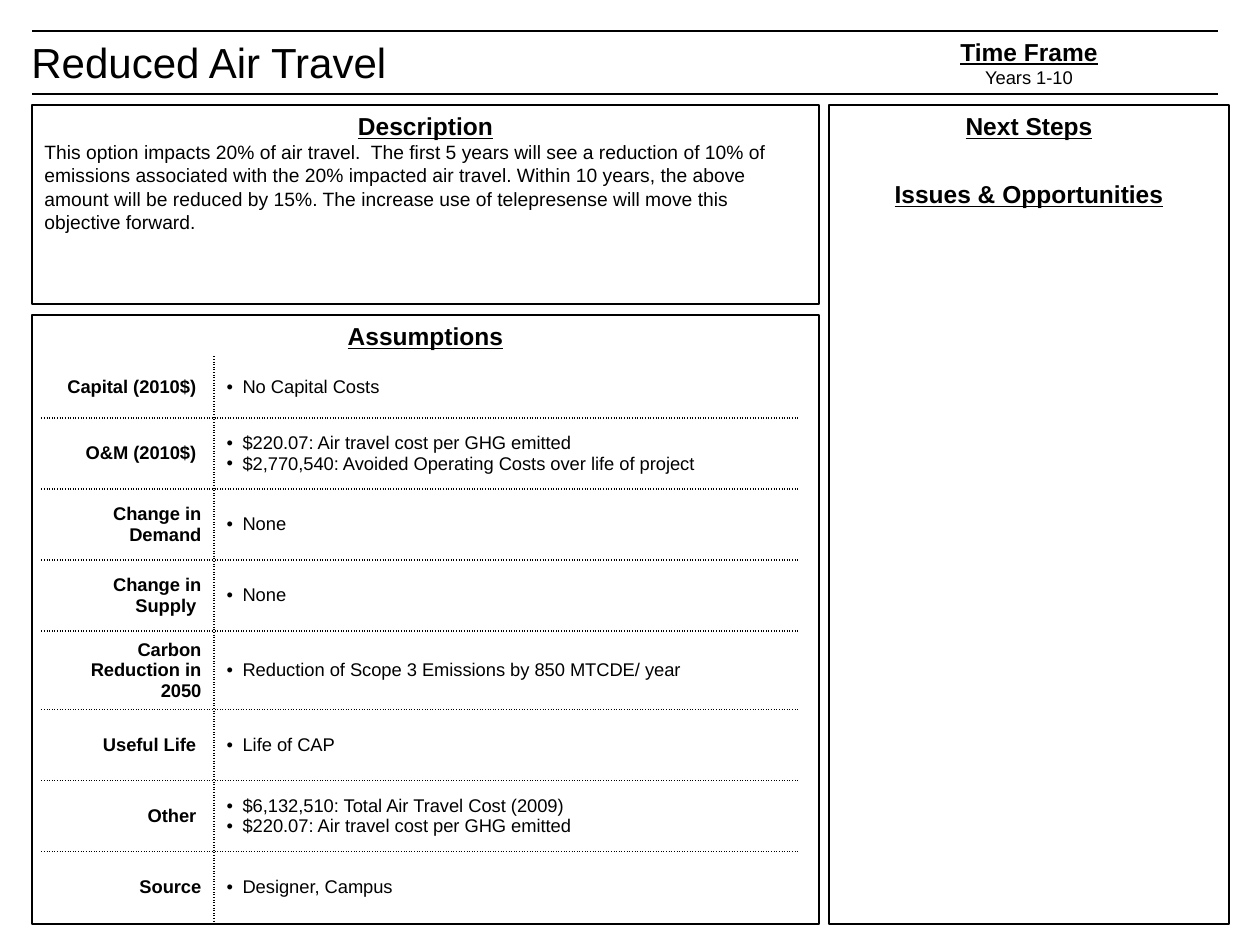
from lxml import etree
from pptx import Presentation
from pptx import util as u
from pptx.dml.color import RGBColor
from pptx.enum import shapes, text
from pptx.oxml import ns

PX = 914400 / 126
COLORS = {"ink": "000000"}
INK = RGBColor.from_string(COLORS["ink"])
ALIGN = text.PP_ALIGN


def px(*values):
    return [u.Emu(round(v * PX)) for v in values]


def write(tf, content, size=10.5, bold=False, underline=False,
          align=ALIGN.LEFT, before=0, bullet=False):
    p = tf.paragraphs[0]
    if p.runs:
        p = tf.add_paragraph()
    p.alignment = align
    p.space_before = u.Pt(before)
    if bullet:
        pPr = p._p.get_or_add_pPr()
        pPr.set("marL", str(px(16)[0]))
        pPr.set("indent", str(px(-16)[0]))
        etree.SubElement(pPr, ns.qn("a:buFont")).set("typeface", "Arial")
        etree.SubElement(pPr, ns.qn("a:buChar")).set("char", "•")
    r = p.add_run()
    r.text = content
    r.font.name = "Arial"
    r.font.size = u.Pt(size)
    r.font.bold = bold
    r.font.underline = underline
    r.font.color.rgb = INK


prs = Presentation()
prs.slide_width, prs.slide_height = px(1260, 945)
s = prs.slides.add_slide(prs.slide_layouts[6])
heading = dict(size=14, bold=True, underline=True, align=ALIGN.CENTER)

tf = s.shapes.add_textbox(*px(19, 30, 396, 63)).text_frame
tf.word_wrap = False
write(tf, "Reduced Air Travel", size=24)

for y in (31, 94):
    line = s.shapes.add_connector(shapes.MSO_CONNECTOR.STRAIGHT, *px(1218, y, 32, y))
    line.line.color.rgb = INK
    line.line.width = u.Pt(1.25)
    etree.SubElement(line._element.spPr, ns.qn("a:effectLst"))

tf = s.shapes.add_textbox(*px(829, 31, 400, 63)).text_frame
tf.word_wrap = False
tf.vertical_anchor = text.MSO_ANCHOR.MIDDLE
write(tf, "Time Frame", **heading)
write(tf, "Years 1-10", align=ALIGN.CENTER)

panels = {
    "Description": (32, 105, 787, 199),
    "Assumptions": (32, 315, 787, 609),
    "Next Steps": (829, 105, 400, 819),
}
frames = {}
for name, box in panels.items():
    sp = s.shapes.add_shape(shapes.MSO_SHAPE.RECTANGLE, *px(*box))
    sp.shadow.inherit = False
    sp.fill.background()
    sp.line.color.rgb = INK
    sp.line.width = u.Pt(1.25)
    tf = frames[name] = sp.text_frame
    tf.word_wrap = True
    tf.vertical_anchor = text.MSO_ANCHOR.TOP
    write(tf, name, **heading)

write(frames["Description"],
      "This option impacts 20% of air travel.  The first 5 years will see a "
      "reduction of 10% of emissions associated with the 20% impacted air travel. "
      "Within 10 years, the above amount will be reduced by 15%. The increase use "
      "of telepresense will move this objective forward.", size=11)
write(frames["Next Steps"], "Issues & Opportunities", before=22, **heading)

assumptions = [
    ("Capital (2010$) ", ["No Capital Costs"]),
    ("O&M (2010$) ", ["$220.07: Air travel cost per GHG emitted",
                      "$2,770,540: Avoided Operating Costs over life of project"]),
    ("Change in Demand", ["None"]),
    ("Change in Supply ", ["None"]),
    ("Carbon Reduction in 2050", ["Reduction of Scope 3 Emissions by 850 MTCDE/ year"]),
    ("Useful Life ", ["Life of CAP"]),
    ("Other ", ["$6,132,510: Total Air Travel Cost (2009)",
                "$220.07: Air travel cost per GHG emitted"]),
    ("Source", ["Designer, Campus"]),
]
last = len(assumptions) - 1
table = s.shapes.add_table(len(assumptions), 2, *px(42, 357, 756, 558)).table
table.first_row = table.horz_banding = False
for column, width in zip(table.columns, px(172, 584)):
    column.width = width

for i, (label, points) in enumerate(assumptions):
    table.rows[i].height = px(71 if i else 61)[0]
    label_cell, points_cell = table.rows[i].cells
    write(label_cell.text_frame, label, bold=True, align=ALIGN.RIGHT)
    for point in points:
        write(points_cell.text_frame, point, bullet=True)
    for cell, side in ((label_cell, "lnR"), (points_cell, "lnL")):
        cell.vertical_anchor = text.MSO_ANCHOR.MIDDLE
        cell.fill.background()
        edges = [side] + ["lnT"] * (i > 0) + ["lnB"] * (i < last)
        for k, edge in enumerate(edges):
            ln = etree.Element(ns.qn("a:" + edge), w=str(u.Pt(1)))
            fill = etree.SubElement(ln, ns.qn("a:solidFill"))
            etree.SubElement(fill, ns.qn("a:srgbClr")).set("val", COLORS["ink"])
            etree.SubElement(ln, ns.qn("a:prstDash")).set("val", "sysDot")
            cell._tc.get_or_add_tcPr().insert(k, ln)

prs.save("out.pptx")
